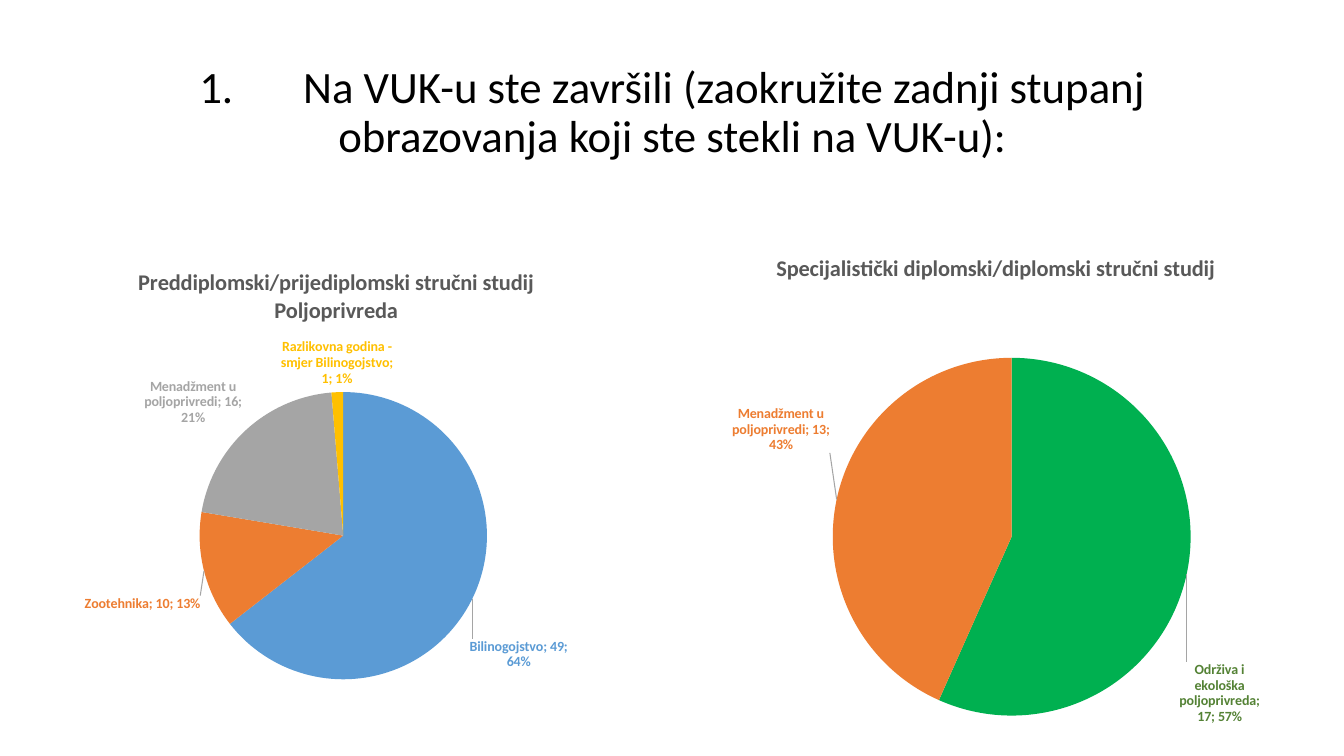
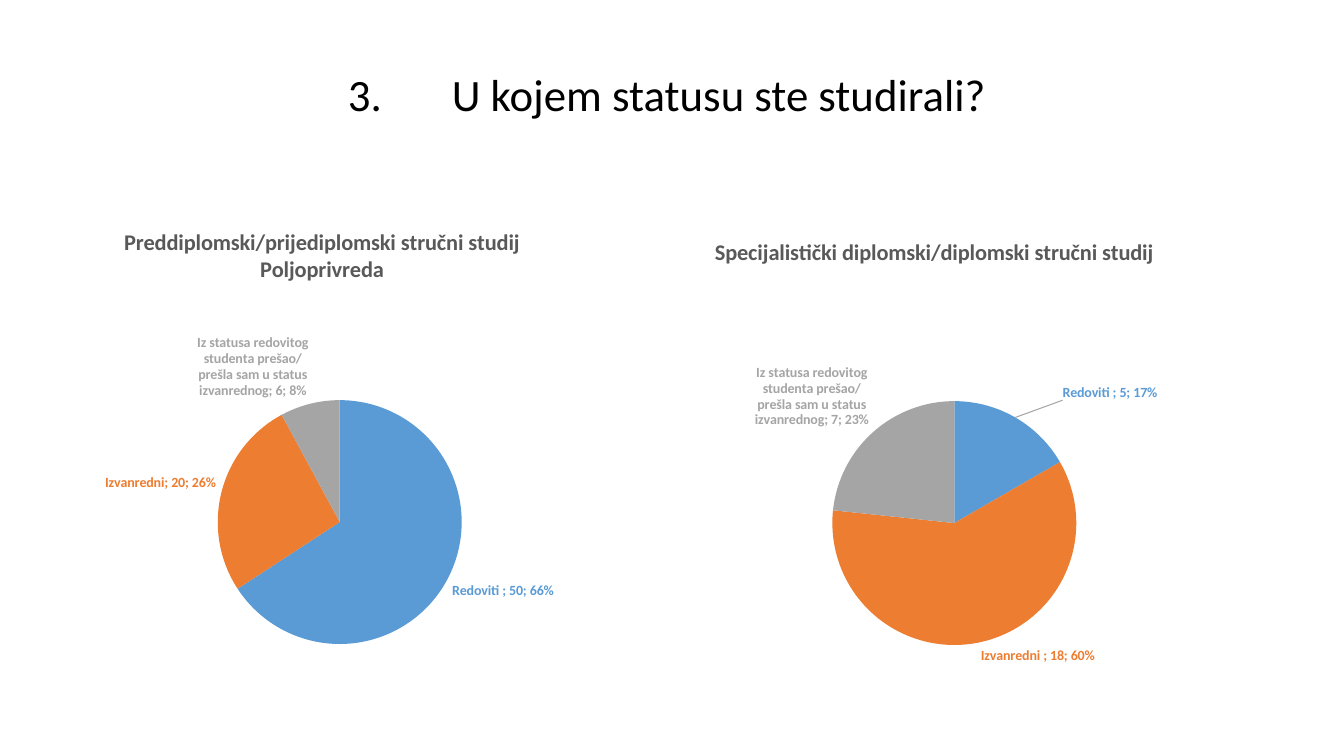
"""Build two survey slides, each with a title and two labelled pie charts."""
from itertools import cycle
from pptx import Presentation
from pptx.chart.data import CategoryChartData as Data
from pptx.dml.color import RGBColor as Color
from pptx.enum.chart import XL_CHART_TYPE as Kind, XL_LABEL_POSITION as Spot
from pptx.enum.text import MSO_ANCHOR as Anchor, MSO_AUTO_SIZE as Fit, PP_ALIGN as Align
from pptx.oxml import parse_xml
from pptx.oxml.ns import nsdecls
from pptx.util import Pt

PX = 9144
HEX = {"blue": "5B9BD5", "orange": "ED7D31", "gray": "A5A5A5", "gold": "FFC000",
       "green": "00B050", "leaf": "548235", "ink": "000000", "head": "595959"}
FONT = "Calibri"
TAB = 103
STYLES = {
    "title": ({"name": FONT, "size": Pt(32), "bold": False}, "ink"),
    "chart": ({"name": FONT, "size": Pt(10)}, "ink"),
    "head": ({"name": FONT, "size": Pt(16), "bold": True}, "head"),
    "label": ({"name": FONT, "size": Pt(10), "bold": True}, None),
}
BASE = "Preddiplomski/prijediplomski stručni studij Poljoprivreda"
SPEC = "Specijalistički diplomski/diplomski stručni studij"
MOVED = "Iz statusa redovitog studenta prešao/prešla sam u status izvanrednog"
SLIDES = [
    {"title": "1.\tNa VUK-u ste završili (zaokružite zadnji stupanj obrazovanja koji ste stekli na VUK-u):",
     "box": (92, 40, 1150, 145),
     "pies": [
         {"head": BASE, "at": (96, 14), "box": (37, 247, 588, 441),
          "plot": (79, 142, 449, 285),
          "rows": [("Bilinogojstvo", 49, "blue", "blue", (-8, 37)),
                   ("Zootehnika", 10, "orange", "orange", (2, 23)),
                   ("Menadžment u poljoprivredi", 16, "gray", "gray", None),
                   ("Razlikovna godina - smjer Bilinogojstvo", 1, "gold", "gold", None)]},
         {"head": SPEC, "at": (70, 38), "box": (696, 209, 600, 526),
          "plot": (71, 146, 473, 355),
          "rows": [("Održiva i ekološka poljoprivreda", 17, "green", "leaf", (-13, 86)),
                   ("Menadžment u poljoprivredi", 13, "orange", "orange", (-1, -45))]}]},
    {"title": "3.\tU kojem statusu ste studirali? ",
     "box": (92, 37, 1149, 118),
     "pies": [
         {"head": BASE, "at": (79, 14), "box": (40, 207, 554, 473),
          "plot": (123, 190, 348, 242),
          "rows": [("Redoviti ", 50, "blue", "blue", None),
                   ("Izvanredni", 20, "orange", "orange", None),
                   (MOVED, 6, "gray", "gray", None)]},
         {"head": SPEC, "at": (86, 15), "box": (619, 216, 612, 473),
          "plot": (144, 182, 367, 242),
          "rows": [("Redoviti ", 5, "blue", "blue", (44, -12)),
                   ("Izvanredni ", 18, "orange", "orange", None),
                   (MOVED, 7, "gray", "gray", None)]}]},
]


def scale(box):
    return [n * PX for n in box]


def style(font, name, tint=None):
    vals, ink = STYLES[name]
    for key, val in vals.items():
        setattr(font, key, val)
    font.color.rgb = Color.from_string(HEX[tint or ink])


def layout(nums, size, edge=False, inner=False):
    tags = [f'<c:{n}Mode val="edge"/>' for n in "xy"] if edge else []
    tags += [f'<c:{n} val="{v / full:.4f}"/>' for n, v, full in zip("xywh", nums, cycle(size))]
    target = '<c:layoutTarget val="inner"/>' if inner else ""
    return parse_xml(f'<c:layout {nsdecls("c")}><c:manualLayout>{target}'
                     f'{"".join(tags)}</c:manualLayout></c:layout>')


def add_title(slide, text, box):
    title = slide.shapes.title
    for key, val in zip(("left", "top", "width", "height"), scale(box)):
        setattr(title, key, val)
    frame = title.text_frame
    for key, val in {"text": text, "word_wrap": True, "auto_size": Fit.NONE,
                     "vertical_anchor": Anchor.MIDDLE}.items():
        setattr(frame, key, val)
    par = frame.paragraphs[0]
    par.alignment, par.line_spacing = Align.CENTER, 0.9
    props = par._p.get_or_add_pPr()
    props.append(parse_xml(f'<a:tabLst {nsdecls("a")}><a:tab pos="{TAB * PX}" algn="l"/></a:tabLst>'))
    for run in par.runs:
        style(run.font, "title")


def add_pie(slide, head, at, box, plot, rows):
    data = Data()
    data.categories = [row[0] for row in rows]
    data.add_series("Series 1", [row[1] for row in rows])
    chart = slide.shapes.add_chart(Kind.PIE, *scale(box), data).chart
    style(chart.font, "chart")
    chart.has_legend = False
    frame = chart.chart_title.text_frame
    frame.text = head
    style(frame.paragraphs[0].runs[0].font, "head")
    pie = chart.plots[0]
    pie.vary_by_categories = True
    ser = pie.series[0]
    for key, val in {"show_value": True, "show_category_name": True, "show_percentage": True,
                     "position": Spot.OUTSIDE_END}.items():
        setattr(ser.data_labels, key, val)
    for num, (_, _, fill, tint, _) in enumerate(rows):
        point = ser.points[num]
        point.format.fill.solid()
        point.format.fill.fore_color.rgb = Color.from_string(HEX[fill])
        point.format.line.fill.background()
        style(point.data_label.font, "label", tint)
        point.data_label.position = Spot.OUTSIDE_END
    place(chart.element, box[2:], at, plot, [row[4] for row in rows])


def place(root, size, at, plot, moves):
    for old in root.xpath("//c:title/c:layout | //c:plotArea/c:layout"):
        old.getparent().remove(old)
    root.xpath("//c:title/c:tx")[0].addnext(layout(at, size, edge=True))
    root.xpath("//c:plotArea")[0].insert(0, layout(plot, size, edge=True, inner=True))
    for label, move in zip(root.xpath("//c:dLbl"), moves):
        for tag in label.xpath("c:showVal | c:showCatName | c:showPercent"):
            tag.set("val", "1")
        label.append(parse_xml(f'<c:separator {nsdecls("c")}>; </c:separator>'))
        if move:
            label.xpath("c:idx")[0].addnext(layout(move, size))
    group = root.xpath("//c:ser/c:dLbls")[0]
    for old in group.xpath("c:showLeaderLines | c:leaderLines"):
        group.remove(old)
    group.append(parse_xml(f'<c:showLeaderLines {nsdecls("c")} val="1"/>'))
    group.append(parse_xml(
        f'<c:leaderLines {nsdecls("c", "a")}><c:spPr><a:ln w="9525"><a:solidFill>'
        f'<a:srgbClr val="{HEX["gray"]}"/></a:solidFill></a:ln></c:spPr></c:leaderLines>'))


def main():
    deck = Presentation()
    deck.slide_width, deck.slide_height = scale((1333, 750))
    for page in SLIDES:
        slide = deck.slides.add_slide(deck.slide_layouts[5])
        add_title(slide, page["title"], page["box"])
        for pie in page["pies"]:
            add_pie(slide, **pie)
    deck.save("out.pptx")


if __name__ == "__main__":
    main()
